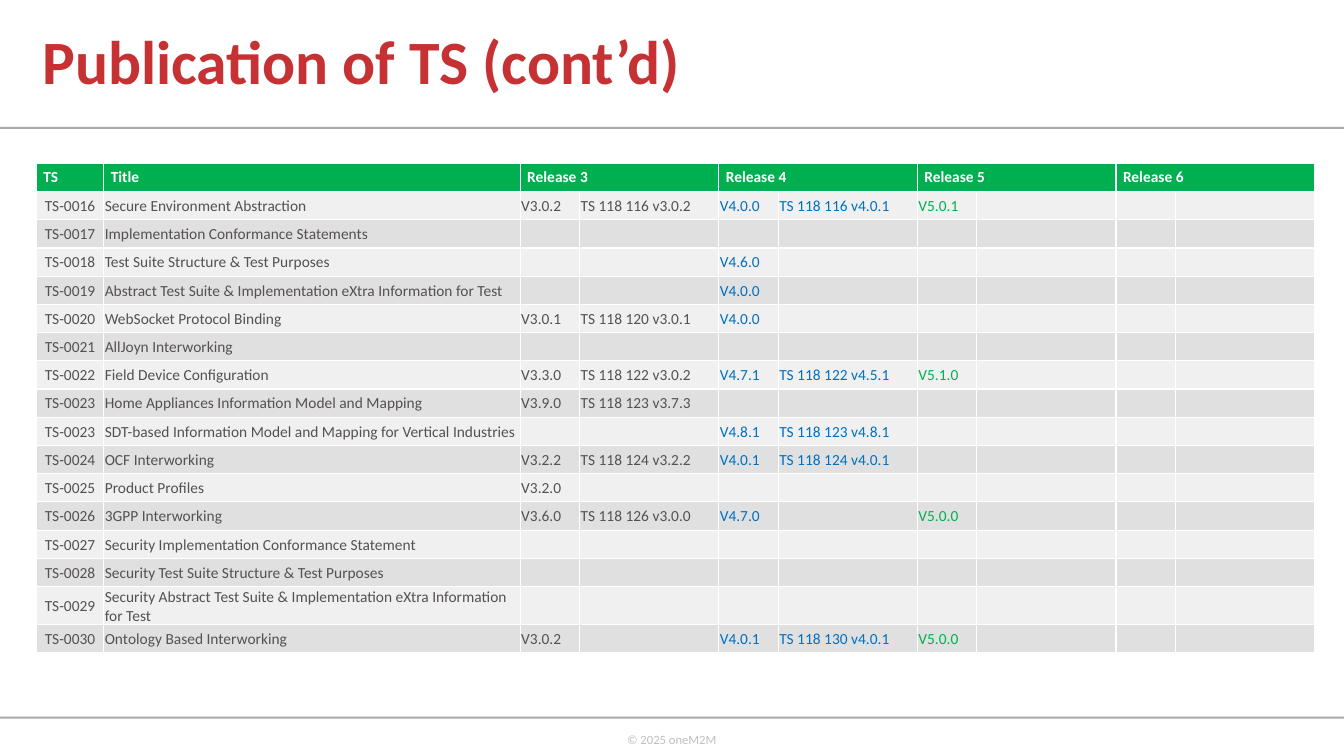
from dataclasses import dataclass

from lxml.etree import SubElement
from pptx import Presentation
from pptx.dml.color import RGBColor
from pptx.enum.shapes import MSO_SHAPE
from pptx.enum.text import MSO_ANCHOR, MSO_AUTO_SIZE, PP_ALIGN
from pptx.oxml.ns import qn
from pptx.slide import Slide
from pptx.table import Table, _Cell as Cell
from pptx.text.text import TextFrame
from pptx.util import Inches, Pt


@dataclass(frozen=True)
class Theme:
    font: str = "Calibri"
    title_size: int = 44
    table_size: int = 11
    footer_size: int = 9
    title: str = "C63133"
    rule: str = "A7A9AC"
    footer: str = "BFBFBF"
    white: str = "FFFFFF"
    header: str = "00B050"
    bands: tuple[str, str] = ("F0F0F0", "E0E0E0")
    text: str = "545054"
    release_4: str = "0070C0"
    release_5: str = "00B050"


@dataclass(frozen=True)
class Specification:
    number: str
    title: str
    release_3: tuple[str, str] = ("", "")
    release_4: tuple[str, str] = ("", "")
    release_5: tuple[str, str] = ("", "")
    release_6: tuple[str, str] = ("", "")

    def values(self) -> list[str]:
        return [self.number, self.title, *self.release_3, *self.release_4,
                *self.release_5, *self.release_6]


THEME = Theme()
HEADINGS = ["TS", "Title", "Release 3", "", "Release 4", "", "Release 5", "", "Release 6", ""]
COLUMN_WIDTHS = [0.67, 4.13] + [0.59, 1.38] * 4
COLUMN_COLORS = ([THEME.text] * 4 + [THEME.release_4] * 2
                 + [THEME.release_5] * 2 + [THEME.text] * 2)
ROW_HEIGHT = 0.28
RULE_TOPS = (1.26, 7.11)

SPECIFICATIONS = [
    Specification("TS-0016", "Secure Environment Abstraction",
                  ("V3.0.2", "TS 118 116 v3.0.2"), ("V4.0.0", "TS 118 116 v4.0.1"), ("V5.0.1", "")),
    Specification("TS-0017", "Implementation Conformance Statements"),
    Specification("TS-0018", "Test Suite Structure & Test Purposes", release_4=("V4.6.0", "")),
    Specification("TS-0019", "Abstract Test Suite & Implementation eXtra Information for Test",
                  release_4=("V4.0.0", "")),
    Specification("TS-0020", "WebSocket Protocol Binding",
                  ("V3.0.1", "TS 118 120 v3.0.1"), ("V4.0.0", "")),
    Specification("TS-0021", "AllJoyn Interworking"),
    Specification("TS-0022", "Field Device Configuration",
                  ("V3.3.0", "TS 118 122 v3.0.2"), ("V4.7.1", "TS 118 122 v4.5.1"), ("V5.1.0", "")),
    Specification("TS-0023", "Home Appliances Information Model and Mapping",
                  ("V3.9.0", "TS 118 123 v3.7.3")),
    Specification("TS-0023", "SDT-based Information Model and Mapping for Vertical Industries",
                  release_4=("V4.8.1", "TS 118 123 v4.8.1")),
    Specification("TS-0024", "OCF Interworking",
                  ("V3.2.2", "TS 118 124 v3.2.2"), ("V4.0.1", "TS 118 124 v4.0.1")),
    Specification("TS-0025", "Product Profiles", ("V3.2.0", "")),
    Specification("TS-0026", "3GPP Interworking",
                  ("V3.6.0", "TS 118 126 v3.0.0"), ("V4.7.0", ""), ("V5.0.0", "")),
    Specification("TS-0027", "Security Implementation Conformance Statement"),
    Specification("TS-0028", "Security Test Suite Structure & Test Purposes"),
    Specification("TS-0029",
                  "Security Abstract Test Suite & Implementation eXtra Information for Test"),
    Specification("TS-0030", "Ontology Based Interworking",
                  ("V3.0.2", ""), ("V4.0.1", "TS 118 130 v4.0.1"), ("V5.0.0", "")),
]


def write(frame: TextFrame, text: str, size: int, color: str,
          bold: bool = False, align: PP_ALIGN = PP_ALIGN.LEFT) -> None:
    frame.text = text
    para = frame.paragraphs[0]
    para.alignment = align
    for span in para.runs:
        span.font.name = THEME.font
        span.font.size = Pt(size)
        span.font.bold = bold
        span.font.color.rgb = RGBColor.from_string(color)
    if not text:
        SubElement(para._p, qn("a:endParaRPr"), sz=str(size * 100))


def set_insets(frame: TextFrame, inset: float) -> None:
    frame.margin_left = frame.margin_right = Inches(inset)
    frame.margin_top = frame.margin_bottom = Inches(inset)


def add_title(slide: Slide, text: str) -> None:
    title = slide.shapes.title
    title.left, title.top = Inches(0.37), Inches(0)
    title.width, title.height = Inches(8.59), Inches(1.28)
    frame = title.text_frame
    set_insets(frame, 0.05)
    frame.vertical_anchor = MSO_ANCHOR.MIDDLE
    frame.auto_size = MSO_AUTO_SIZE.NONE
    write(frame, text, THEME.title_size, THEME.title, bold=True)
    frame.paragraphs[0].line_spacing = 0.9


def add_rule(slide: Slide, top: float) -> None:
    rule = slide.shapes.add_shape(MSO_SHAPE.RECTANGLE, Inches(0), Inches(top),
                                  Inches(13.33), Inches(0.02))
    rule.shadow.inherit = False
    rule.fill.solid()
    rule.fill.fore_color.rgb = RGBColor.from_string(THEME.rule)
    rule.line.fill.background()


def add_footer(slide: Slide, text: str) -> None:
    box = slide.shapes.add_textbox(Inches(6.17), Inches(7.21), Inches(1.02), Inches(0.25))
    frame = box.text_frame
    set_insets(frame, 0.05)
    frame.word_wrap = False
    frame.auto_size = MSO_AUTO_SIZE.SHAPE_TO_FIT_TEXT
    write(frame, text, THEME.footer_size, THEME.footer)


def style_cell(cell: Cell, fill: str, side: float, top: float) -> None:
    cell.margin_left = cell.margin_right = Inches(side)
    cell.margin_top, cell.margin_bottom = Inches(top), Inches(0)
    cell.vertical_anchor = MSO_ANCHOR.MIDDLE
    properties = cell._tc.get_or_add_tcPr()
    for edge in ("a:lnL", "a:lnR", "a:lnT", "a:lnB"):
        line = SubElement(properties, qn(edge), w=str(Pt(1)))
        SubElement(SubElement(line, qn("a:solidFill")), qn("a:srgbClr"), val=THEME.white)
    cell.fill.solid()
    cell.fill.fore_color.rgb = RGBColor.from_string(fill)


def fill_header(table: Table) -> None:
    for column, heading in enumerate(HEADINGS):
        cell = table.cell(0, column)
        style_cell(cell, THEME.header, 0.07, 0)
        write(cell.text_frame, heading, THEME.table_size, THEME.white, bold=True)
    for column in range(2, len(HEADINGS), 2):
        table.cell(0, column).merge(table.cell(0, column + 1))


def fill_row(table: Table, row: int, specification: Specification) -> None:
    for column, value in enumerate(specification.values()):
        cell = table.cell(row, column)
        style_cell(cell, THEME.bands[(row - 1) % 2], 0.01, 0.01)
        align = PP_ALIGN.LEFT if column else PP_ALIGN.CENTER
        write(cell.text_frame, value, THEME.table_size, COLUMN_COLORS[column], align=align)


def add_publication_table(slide: Slide) -> None:
    row_count = len(SPECIFICATIONS) + 1
    table = slide.shapes.add_table(
        row_count, len(COLUMN_WIDTHS), Inches(0.36), Inches(1.62),
        Inches(sum(COLUMN_WIDTHS)), Inches(ROW_HEIGHT * row_count)).table
    for column, width in zip(table.columns, COLUMN_WIDTHS):
        column.width = Inches(width)
    for row in table.rows:
        row.height = Inches(ROW_HEIGHT)
    fill_header(table)
    for row, specification in enumerate(SPECIFICATIONS, start=1):
        fill_row(table, row, specification)


def main() -> None:
    deck = Presentation()
    deck.slide_width, deck.slide_height = Inches(13.33), Inches(7.5)
    page = deck.slides.add_slide(deck.slide_layouts[5])
    for top in RULE_TOPS:
        add_rule(page, top)
    add_footer(page, "© 2025 oneM2M")
    add_title(page, "Publication of TS (cont’d)")
    add_publication_table(page)
    deck.save("out.pptx")


if __name__ == "__main__":
    main()
